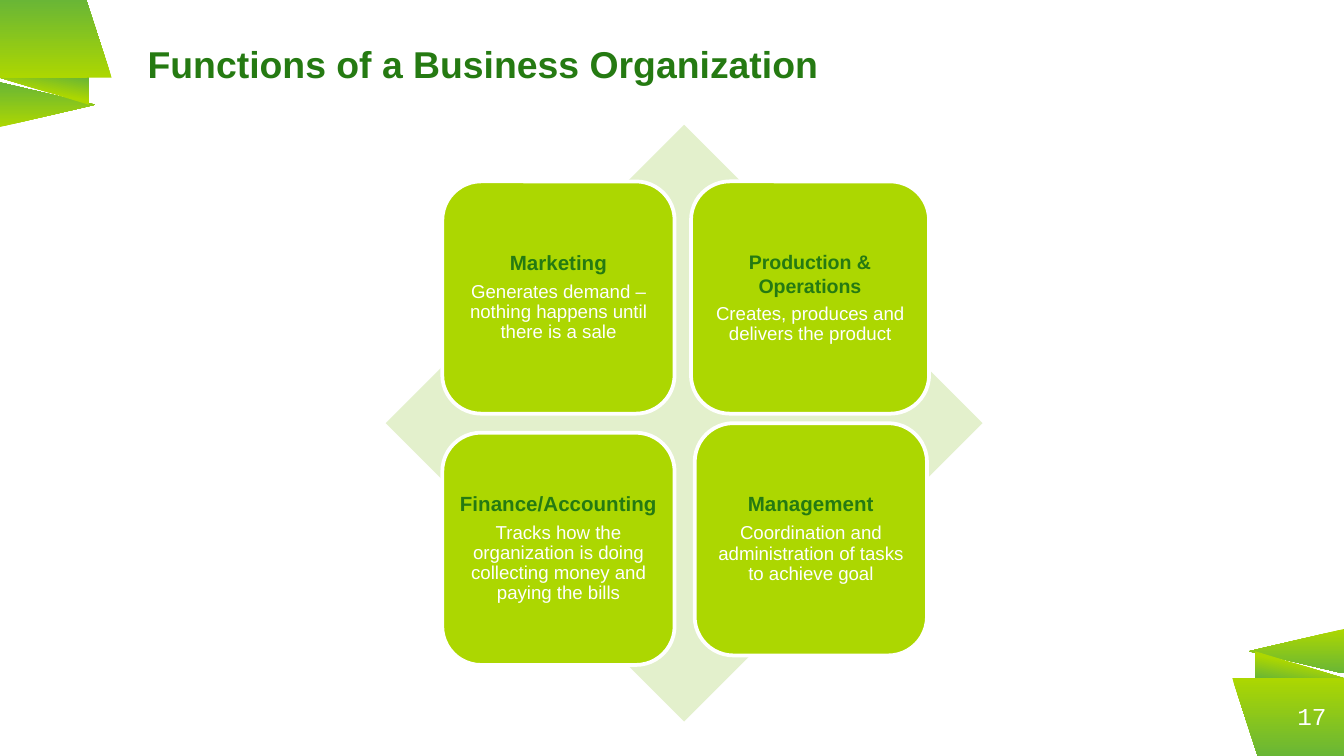
import pptx
import pptx.util
import pptx.dml.color
import pptx.enum.shapes
import pptx.enum.text

Cm, Pt = pptx.util.Cm, pptx.util.Pt
Kind = pptx.enum.shapes.MSO_SHAPE
Side = pptx.enum.text.PP_ALIGN
Hold = pptx.enum.text.MSO_ANCHOR

# Content
TITLE = "Functions of a Business Organization"
NUMBER = "17"
# heading, body, heading size, heading line spacing, box (cm)
CARDS = [
    ("Marketing", "Generates demand – nothing happens until there is a sale",
     11, 0.9, (8.36, 3.43, 4.39, 4.39)),
    ("Production & Operations", "Creates, produces and delivers the product",
     10.5, 1, (13.06, 3.43, 4.5, 4.39)),
    ("Finance/Accounting",
     "Tracks how the organization is doing collecting money and paying the bills",
     11, 0.9, (8.36, 8.18, 4.39, 4.39)),
    ("Management", "Coordination and administration of tasks to achieve goal",
     11, 0.9, (13.13, 8, 4.39, 4.39)),
]
# Ribbon at top left: kind, box (cm), turn, gradient angle, first stop
RIBBON = [
    (Kind.ISOSCELES_TRIANGLE, (0.48, 1.08, 0.84, 1.8), 90, 180, 0),
    (Kind.RIGHT_TRIANGLE, (0, 1.47, 1.68, 0.51), 180, 260, 0.47),
    (Kind.RECTANGLE, (0, 0, 1.65, 1.47), 0, 90, 0),
    (Kind.ISOSCELES_TRIANGLE, (1.63, 0, 0.48, 1.47), 0, 90, 0),
]
WIDE, HIGH = 25.4, 14.29
LIME, LEAF, DARK, PALE, WHITE = "ACD701", "69B636", "257A12", "E3F0CC", "FFFFFF"


def tint(item, code):
    item.rgb = pptx.dml.color.RGBColor.from_string(code)


def shape(kind, box, fill=None, line=None):
    form = slide.shapes.add_shape(kind, *[Cm(n) for n in box])
    form.shadow.inherit = False
    if fill:
        form.fill.solid()
        tint(form.fill.fore_color, fill)
    if line:
        tint(form.line.color, line)
        form.line.width = Pt(2)
    else:
        form.line.fill.background()
    return form


def frame(form, inset, anchor):
    body = form.text_frame
    body.word_wrap = True
    body.auto_size = pptx.enum.text.MSO_AUTO_SIZE.NONE
    body.vertical_anchor = anchor
    body.margin_left = body.margin_right = Cm(inset)
    body.margin_top = body.margin_bottom = Cm(min(inset, 0.13))
    return body


def write(para, text, size, color, font="Arial", bold=False,
          align=Side.CENTER, space=1, after=0):
    para.alignment = align
    para.line_spacing = space
    para.space_before = Pt(0)
    para.space_after = Pt(after)
    run = para.add_run()
    run.text = text
    run.font.name, run.font.size, run.font.bold = font, Pt(size), bold
    tint(run.font.color, color)


deck = pptx.Presentation()
deck.slide_width, deck.slide_height = Cm(WIDE), Cm(HIGH)
slide = deck.slides.add_slide(deck.slide_layouts[5])

# Corner ribbons: the second is the first turned half round
for half in (True, False):
    for kind, (x, y, w, h), turn, angle, first in RIBBON:
        if half:
            x, y, turn = WIDE - x - w, HIGH - y - h, (turn + 180) % 360
        part = shape(kind, (x, y, w, h))
        part.rotation = turn
        if kind == Kind.ISOSCELES_TRIANGLE:
            part.adjustments[0] = 0.5 if turn % 180 else 0
        part.fill.gradient()
        part.fill.gradient_angle = angle
        for stop, code, spot in zip(part.fill.gradient_stops, (LIME, LEAF), (first, 1)):
            tint(stop.color, code)
            stop.position = spot

# Slide number
box = slide.shapes.add_textbox(Cm(23.72), Cm(12.8), Cm(1.35), Cm(1.47))
write(frame(box, 0, Hold.MIDDLE).paragraphs[0], NUMBER, 13, WHITE,
      font="Courier New", align=Side.RIGHT)

# Title
head = slide.shapes.title
head.left, head.top, head.width, head.height = Cm(2.54), Cm(0.64), Cm(14.1), Cm(1.12)
write(frame(head, 0.25, Hold.MIDDLE).paragraphs[0], TITLE, 20, DARK,
      bold=True, align=Side.LEFT)

# Diamond with four cards
shape(Kind.DIAMOND, (7.29, 2.36, 11.28, 11.28), PALE)
for name, note, size, space, area in CARDS:
    card = shape(Kind.ROUNDED_RECTANGLE, area, LIME, WHITE)
    body = frame(card, 0.1, Hold.MIDDLE)
    write(body.paragraphs[0], name, size, DARK, bold=True, space=space, after=4)
    write(body.add_paragraph(), note, 10, WHITE, space=0.9, after=4)

deck.save("out.pptx")
